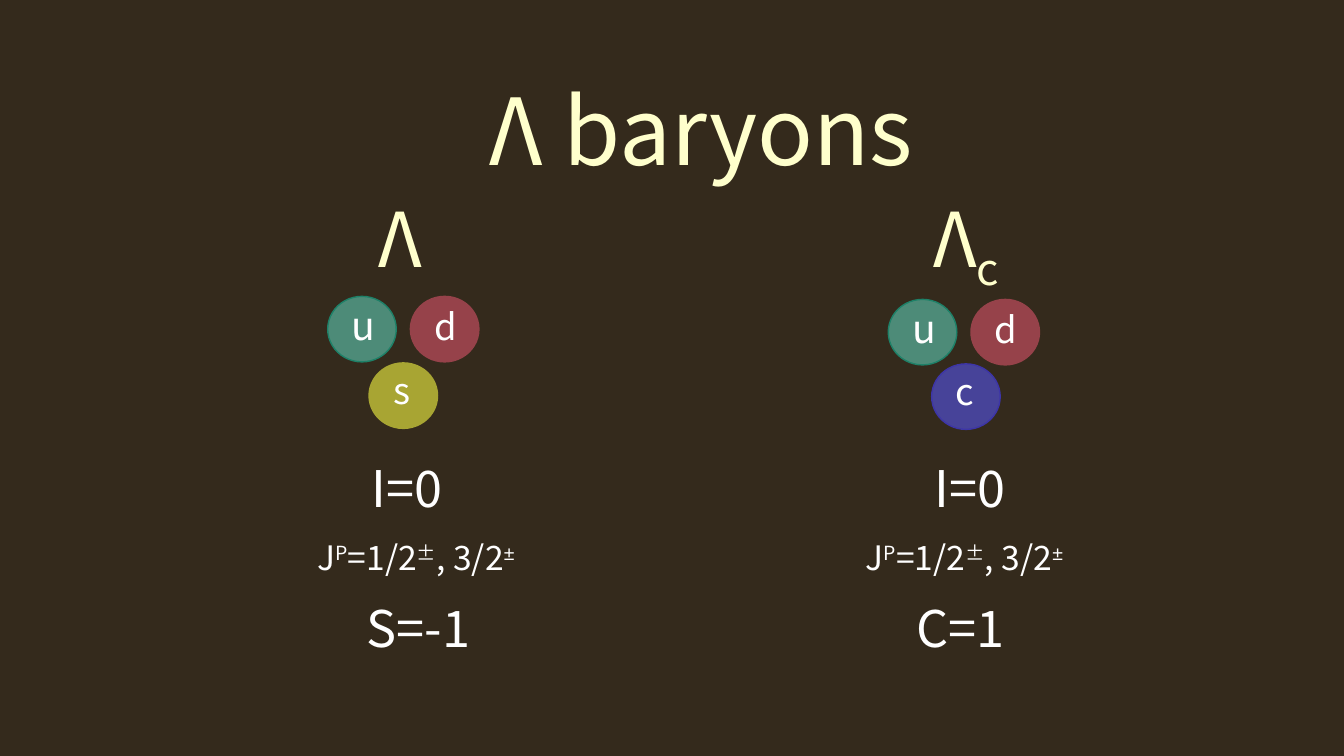
from dataclasses import dataclass

from pptx import Presentation
from pptx.dml.color import RGBColor
from pptx.enum.shapes import MSO_SHAPE
from pptx.enum.text import MSO_AUTO_SIZE
from pptx.shapes.shapetree import GroupShapes, SlideShapes
from pptx.util import Emu, Pt

EMU_PER_PX = 9144  # 100 px to the inch
COLORS = {
    "background": "342A1C", "heading": "FFFFCC", "text": "FFFFFF",
    "up": "4D8B78", "up_line": "1E8168", "down": "96424A",
    "strange": "A8A533", "charm": "474399", "charm_line": "3D35A7",
}
SANS_TC, SANS_SC, SANS_KR = (f"Noto Sans CJK {region}" for region in ("TC", "SC", "KR"))
SUPERSCRIPT, SUBSCRIPT = 30, -25
QUARK_WIDTH, QUARK_HEIGHT = 68, 65
LABEL_INSET, LABEL_WIDTH = 14, 39

Box = tuple[int, int, int, int]


@dataclass(frozen=True)
class Run:
    text: str
    baseline: int = 0
    font: str | None = None


@dataclass(frozen=True)
class Quark:
    letter: str
    fill: str
    line: str
    size: int = 26
    label_drop: int = 0
    label_height: int = 56


@dataclass(frozen=True)
class Baryon:
    symbol: list[Run]
    symbol_left: int
    quarks: list[tuple[Quark, int, int]]  # quark, left, top
    isospin_left: int
    spin_left: int
    flavour: str
    flavour_left: int


UP = Quark("u", "up", "up_line", size=28, label_height=57)
DOWN = Quark("d", "down", "down", label_drop=3, label_height=54)
STRANGE = Quark("s", "strange", "strange")
CHARM = Quark("c", "charm", "charm_line")

SPIN_PARITY = [
    Run("J"), Run("P", SUPERSCRIPT), Run("=1/2"), Run("±", SUPERSCRIPT),
    Run(", 3/2"), Run("±", SUPERSCRIPT, "Arial"),
]
BARYONS = [
    Baryon([Run("Λ")], 366,
           [(UP, 325, 294), (DOWN, 407, 294), (STRANGE, 366, 360)],
           359, 305, "S=-1", 354),
    Baryon([Run("Λ"), Run("c", SUBSCRIPT)], 916,
           [(UP, 881, 297), (DOWN, 963, 297), (CHARM, 924, 361)],
           917, 849, "C=1", 899),
]


def px(length: int) -> Emu:
    return Emu(length * EMU_PER_PX)


def rgb(color: str) -> RGBColor:
    return RGBColor.from_string(COLORS[color])


def add_text(shapes: SlideShapes | GroupShapes, text: str | list[Run], box: Box, *,
             size: int, font: str = SANS_SC, color: str = "text") -> None:
    frame = shapes.add_textbox(*map(px, box)).text_frame
    frame.word_wrap = True
    frame.auto_size = MSO_AUTO_SIZE.SHAPE_TO_FIT_TEXT
    paragraph = frame.paragraphs[0]
    for part in [Run(text)] if isinstance(text, str) else text:
        run = paragraph.add_run()
        run.text = part.text
        run.font.size = Pt(size)
        run.font.name = part.font or font
        run.font.color.rgb = rgb(color)
        if part.baseline:
            run.font._element.set("baseline", str(part.baseline * 1000))


def add_quark(shapes: GroupShapes, quark: Quark, left: int, top: int) -> None:
    circle = shapes.add_shape(MSO_SHAPE.FLOWCHART_CONNECTOR,
                              *map(px, (left, top, QUARK_WIDTH, QUARK_HEIGHT)))
    circle.shadow.inherit = False
    circle.fill.solid()
    circle.fill.fore_color.rgb = rgb(quark.fill)
    circle.line.color.rgb = rgb(quark.line)
    circle.line.width = Pt(1)
    label_box = (left + LABEL_INSET, top + quark.label_drop, LABEL_WIDTH, quark.label_height)
    add_text(shapes, quark.letter, label_box, size=quark.size, font=SANS_KR)


def add_baryon(shapes: SlideShapes, baryon: Baryon) -> None:
    """Draw one column: symbol, quark content and quantum numbers."""
    add_text(shapes, baryon.symbol, (baryon.symbol_left, 185, 121, 101),
             size=54, color="heading")
    quark_group = shapes.add_group_shape()
    for quark, left, top in baryon.quarks:
        add_quark(quark_group.shapes, quark, left, top)
    add_text(shapes, "I=0", (baryon.isospin_left, 449, 158, 71), size=36)
    add_text(shapes, SPIN_PARITY, (baryon.spin_left, 528, 228, 50), size=24)
    add_text(shapes, baryon.flavour, (baryon.flavour_left, 587, 158, 71), size=36)


def main() -> None:
    presentation = Presentation()
    presentation.slide_width, presentation.slide_height = px(1333), px(750)
    slide = presentation.slides.add_slide(presentation.slide_layouts[6])
    slide.background.fill.solid()
    slide.background.fill.fore_color.rgb = rgb("background")
    add_text(slide.shapes, "Λ baryons", (476, 68, 516, 121),
             size=66, font=SANS_TC, color="heading")
    for baryon in BARYONS:
        add_baryon(slide.shapes, baryon)
    presentation.save("out.pptx")


if __name__ == "__main__":
    main()
